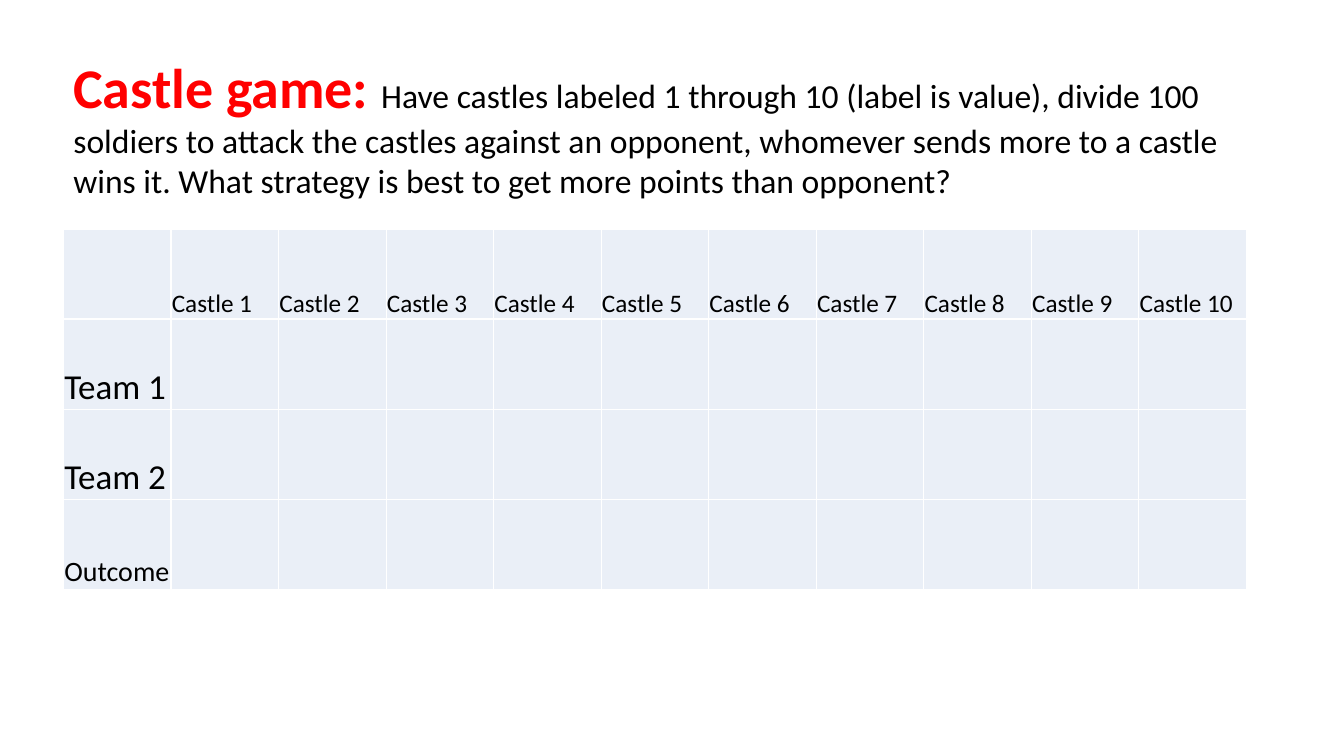
from dataclasses import dataclass

import pptx
import pptx.dml.color
import pptx.enum.text
import pptx.oxml
import pptx.oxml.ns
import pptx.util
from pptx.util import Cm


@dataclass(frozen=True)
class Theme:
    font: str = "Calibri"
    accent: str = "FF0000"
    ink: str = "000000"
    cell: str = "EAEFF7"
    border: str = "FFFFFF"
    title_size: int = 40
    body_size: int = 24
    castle_size: int = 18
    team_size: int = 25
    outcome_size: int = 20


THEME = Theme()
CASTLES = [f"Castle {number}" for number in range(1, 11)]
ROW_LABELS = [
    ("Team 1", THEME.team_size),
    ("Team 2", THEME.team_size),
    ("Outcome", THEME.outcome_size),
]
RULES = (
    "Have castles labeled 1 through 10 (label is value), divide 100 soldiers "
    "to attack the castles against an opponent, whomever sends more to a castle "
    "wins it. What strategy is best to get more points than opponent?"
)


def color(value):
    return pptx.dml.color.RGBColor.from_string(value)


def add_text(paragraph, text, *, size, ink=THEME.ink, bold=False):
    run = paragraph.add_run()
    run.text = text
    run.font.name = THEME.font
    run.font.size = pptx.util.Pt(size)
    run.font.bold = bold
    run.font.color.rgb = color(ink)


def add_heading(slide):
    box = slide.shapes.add_textbox(Cm(1.6), Cm(1.2), Cm(31.1), Cm(4.01))
    box.text_frame.word_wrap = True
    paragraph = box.text_frame.paragraphs[0]
    add_text(paragraph, "Castle game: ", size=THEME.title_size,
             ink=THEME.accent, bold=True)
    add_text(paragraph, RULES, size=THEME.body_size)


def style_cell(cell):
    """Set the fill, thin borders, tight margins and bottom anchor."""
    cell.fill.solid()
    cell.fill.fore_color.rgb = color(THEME.cell)
    cell.vertical_anchor = pptx.enum.text.MSO_ANCHOR.BOTTOM
    cell.margin_left = cell.margin_right = cell.margin_top = Cm(0.02)
    cell.margin_bottom = 0
    properties = cell._tc.get_or_add_tcPr()
    for position, side in enumerate(("lnL", "lnR", "lnT", "lnB")):
        properties.insert(position, pptx.oxml.parse_xml(
            f'<a:{side} {pptx.oxml.ns.nsdecls("a")} w="12700"><a:solidFill>'
            f'<a:srgbClr val="{THEME.border}"/></a:solidFill></a:{side}>'
        ))


def add_score_table(slide):
    row_count, column_count = len(ROW_LABELS) + 1, len(CASTLES) + 1
    column_width, row_height = Cm(2.71), Cm(2.27)
    table = slide.shapes.add_table(
        row_count, column_count, Cm(1.6), Cm(5.77),
        column_width * column_count, row_height * row_count,
    ).table
    table.first_row = table.horz_banding = False
    for column in table.columns:
        column.width = column_width
    for row in table.rows:
        row.height = row_height
    for cell in table.iter_cells():
        style_cell(cell)
    for column, castle in enumerate(CASTLES, start=1):
        add_text(table.cell(0, column).text_frame.paragraphs[0], castle,
                 size=THEME.castle_size)
    for row, (label, size) in enumerate(ROW_LABELS, start=1):
        add_text(table.cell(row, 0).text_frame.paragraphs[0], label, size=size)


def main():
    presentation = pptx.Presentation()
    presentation.slide_width = Cm(33.87)
    presentation.slide_height = Cm(19.05)
    slide = presentation.slides.add_slide(presentation.slide_layouts[6])
    add_heading(slide)
    add_score_table(slide)
    presentation.save("out.pptx")


if __name__ == "__main__":
    main()
